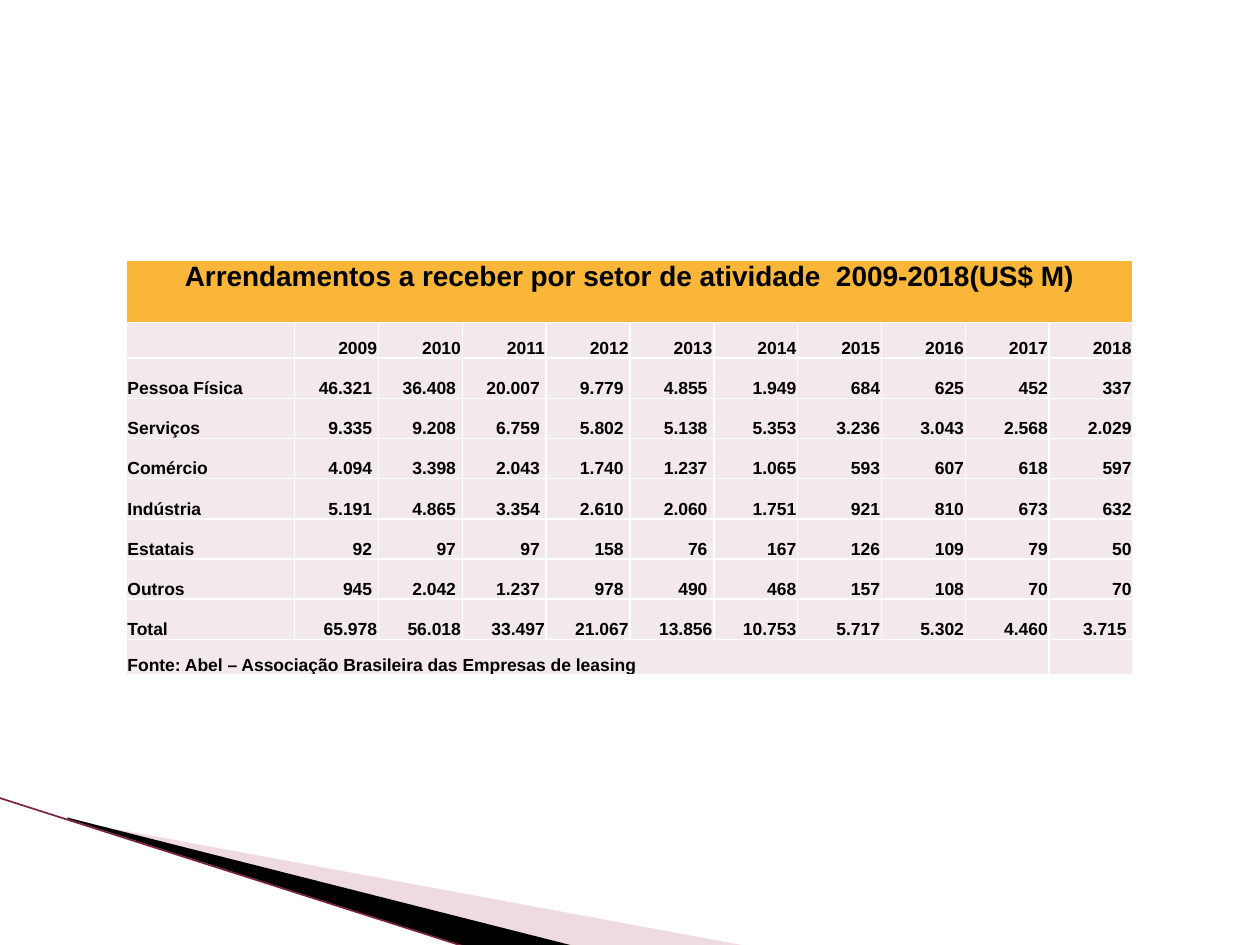
from lxml import etree
from pptx import Presentation
from pptx import util as u
from pptx.dml import color
from pptx.enum import shapes, text
from pptx.oxml import ns

COLORS = {
    "title": "F9B639",
    "body": "F3E8EB",
    "border": "FFFFFF",
    "text": "000000",
    "pale": "D8A3AF",
    "dark": "000000",
    "edge": "7A2340",
}

TITLE = "Arrendamentos a receber por setor de atividade  2009-2018(US$ M)"
SOURCE = "Fonte: Abel – Associação Brasileira das Empresas de leasing"
YEARS = [str(year) for year in range(2009, 2019)]
SECTORS = {
    "Pessoa Física": "46.321 36.408 20.007 9.779 4.855 1.949 684 625 452 337",
    "Serviços": "9.335 9.208 6.759 5.802 5.138 5.353 3.236 3.043 2.568 2.029",
    "Comércio": "4.094 3.398 2.043 1.740 1.237 1.065 593 607 618 597",
    "Indústria": "5.191 4.865 3.354 2.610 2.060 1.751 921 810 673 632",
    "Estatais": "92 97 97 158 76 167 126 109 79 50",
    "Outros": "945 2.042 1.237 978 490 468 157 108 70 70",
    "Total": "65.978 56.018 33.497 21.067 13.856 10.753 5.717 5.302 4.460 3.715",
}
ROW_HEIGHTS = [1.26, 0.72] + [0.81] * len(SECTORS) + [0.72]
COLUMN_WIDTHS = [3.4] + [1.69] * len(YEARS)


def rgb(name):
    return color.RGBColor.from_string(COLORS[name])


def add_wedge(slide, points, fill, alpha=None):
    corners = [(u.Cm(x), u.Cm(y)) for x, y in points]
    builder = slide.shapes.build_freeform(*corners[0])
    builder.add_line_segments(corners[1:], close=True)
    shape = builder.convert_to_shape()
    shape.shadow.inherit = False
    shape.line.fill.background()
    shape.fill.solid()
    shape.fill.fore_color.rgb = rgb(fill)
    if alpha is not None:
        fill_color = shape.fill._xPr.find(".//" + ns.qn("a:srgbClr"))
        etree.SubElement(fill_color, ns.qn("a:alpha"), val=str(alpha * 1000))


def add_edge(slide, start, end):
    points = [u.Cm(value) for value in start + end]
    connector = slide.shapes.add_connector(shapes.MSO_CONNECTOR.STRAIGHT, *points)
    connector.line.color.rgb = rgb("edge")
    connector.line.width = u.Pt(0.95)
    properties = connector._element.spPr
    etree.SubElement(properties, ns.qn("a:effectLst"))


def add_borders(cell):
    properties = cell._tc.get_or_add_tcPr()
    for side in ("lnL", "lnR", "lnT", "lnB"):
        line = etree.SubElement(properties, ns.qn(f"a:{side}"), w=str(u.Pt(1)))
        fill = etree.SubElement(line, ns.qn("a:solidFill"))
        etree.SubElement(fill, ns.qn("a:srgbClr"), val=COLORS["border"])


def format_cell(cell, content, align, fill="body", size=10, right=0.03):
    add_borders(cell)
    cell.fill.solid()
    cell.fill.fore_color.rgb = rgb(fill)
    cell.margin_left = cell.margin_top = u.Cm(0.03)
    cell.margin_right = u.Cm(right)
    cell.margin_bottom = 0
    cell.vertical_anchor = text.MSO_ANCHOR.BOTTOM
    cell.text = content
    paragraph = cell.text_frame.paragraphs[0]
    paragraph.alignment = align
    paragraph.font.name = "Arial"
    paragraph.font.size = u.Pt(size)
    paragraph.font.bold = True
    paragraph.font.color.rgb = rgb("text")


def is_indented(row, column):
    is_total = row == len(SECTORS) + 1
    return column == len(YEARS) if is_total else row > 1 and 1 <= column <= 5


def add_sector_table(slide):
    blanks = [""] * len(YEARS)
    rows = [[TITLE] + blanks, [""] + YEARS]
    rows += [[sector] + values.split() for sector, values in SECTORS.items()]
    rows.append([SOURCE] + blanks)
    table = slide.shapes.add_table(
        len(rows), len(COLUMN_WIDTHS), u.Cm(2.54), u.Cm(5.24),
        u.Cm(sum(COLUMN_WIDTHS)), u.Cm(sum(ROW_HEIGHTS)),
    ).table
    table.first_row = table.horz_banding = False
    for column, width in zip(table.columns, COLUMN_WIDTHS):
        column.width = u.Cm(width)
    for row, height in zip(table.rows, ROW_HEIGHTS):
        row.height = u.Cm(height)

    last_row, last_column = len(rows) - 1, len(YEARS)
    table.cell(0, 0).merge(table.cell(0, last_column))
    table.cell(last_row, 0).merge(table.cell(last_row, last_column - 1))
    for i, row in enumerate(rows):
        for j, content in enumerate(row):
            cell = table.cell(i, j)
            if i == 0:
                format_cell(cell, content, text.PP_ALIGN.CENTER, "title", 16)
                cell.vertical_anchor = text.MSO_ANCHOR.TOP
            else:
                align = text.PP_ALIGN.RIGHT if j else text.PP_ALIGN.LEFT
                right = 0.13 if is_indented(i, j) else 0.03
                format_cell(cell, content, align, right=right)


def main():
    presentation = Presentation()
    presentation.slide_width = u.Cm(25.4)
    presentation.slide_height = u.Cm(19.05)
    slide = presentation.slides.add_slide(presentation.slide_layouts[6])
    add_wedge(slide, [(1.4, 16.54), (15.11, 19.08), (11.58, 19.08), (1.4, 16.51)],
              "pale", 40)
    add_wedge(slide, [(1.35, 16.48), (11.61, 19.08), (9.45, 19.1), (1.37, 16.51)],
              "dark")
    add_edge(slide, (-0.03, 16.08), (9.42, 19.1))
    add_sector_table(slide)
    presentation.save("out.pptx")


if __name__ == "__main__":
    main()
